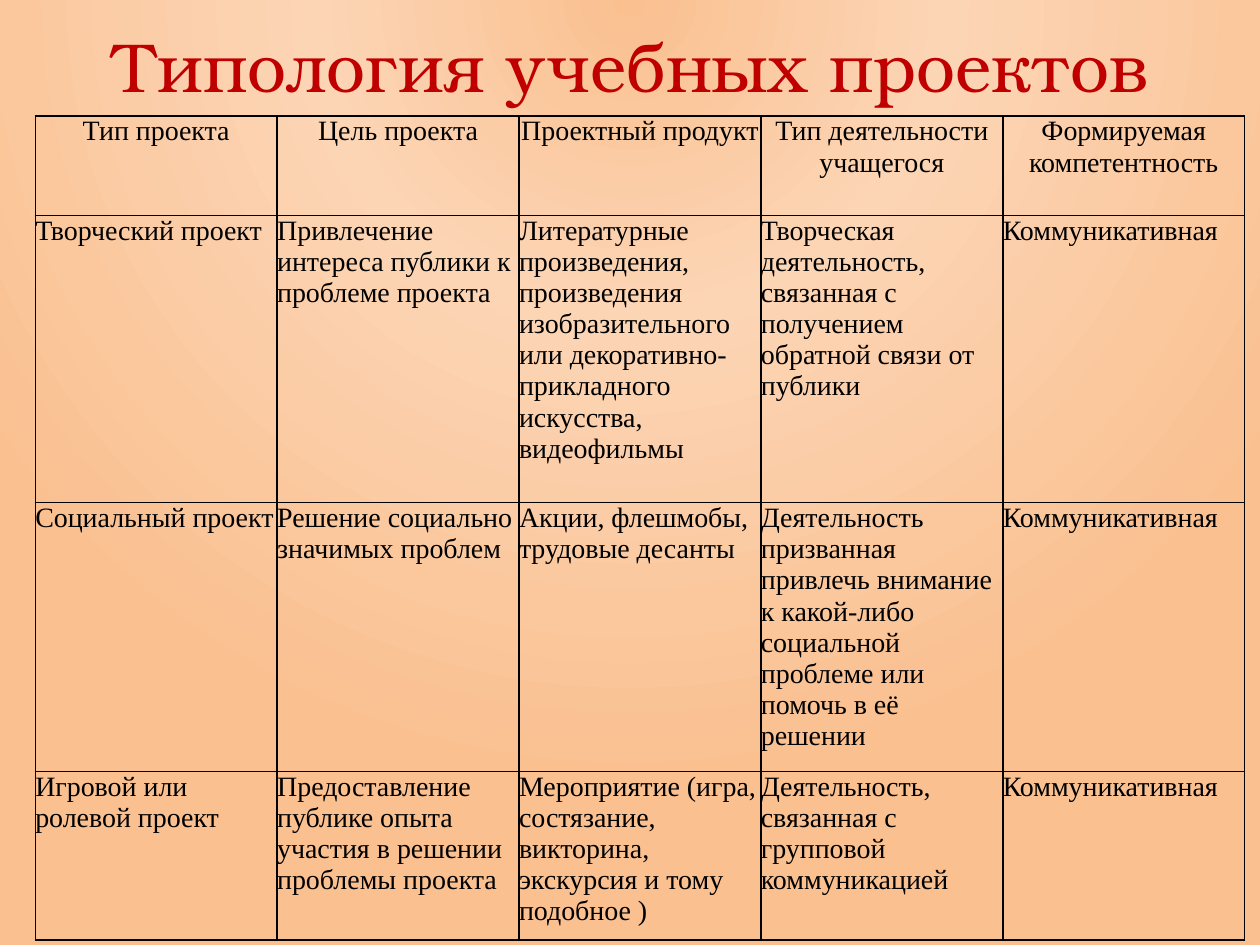
from lxml import etree
from pptx import Presentation
from pptx.dml.color import RGBColor
from pptx.enum.text import MSO_ANCHOR, PP_ALIGN
from pptx.oxml.ns import qn
from pptx.util import Inches, Pt

CENTER, LEFT = PP_ALIGN.CENTER, PP_ALIGN.LEFT
MIDDLE = MSO_ANCHOR.MIDDLE
BLANK_LAYOUT = 6

BLACK, RED = "000000", "C00000"
PEACH, LIGHT_PEACH = "FAC090", "FCD5B5"
BACKGROUND_STOPS = [(0, PEACH), (40, LIGHT_PEACH), (100, PEACH)]
BACKGROUND_FOCUS = {"l": 50, "t": -80, "r": 50, "b": 180}

TITLE_FORMAT = {"name": "TeX Gyre Bonum", "size": Pt(39.6), "bold": False}
CELL_FORMAT = {"name": "Times New Roman", "size": Pt(16), "bold": False}
MARGINS = ("margin_left", "margin_top", "margin_right", "margin_bottom")

COLUMN_WIDTH = 1.92
ROW_HEIGHTS = [0.79, 2.28, 1.98, 1.34]
PROJECT_TYPES = [
    ["Тип проекта", "Цель проекта", "Проектный продукт",
     "Тип деятельности учащегося", "Формируемая компетентность"],
    ["Творческий проект",
     "Привлечение интереса публики к проблеме проекта",
     "Литературные произведения, произведения изобразительного или "
     "декоративно-прикладного искусства, видеофильмы",
     "Творческая деятельность, связанная с получением обратной связи от публики",
     "Коммуникативная"],
    ["Социальный проект",
     "Решение социально значимых проблем",
     "Акции, флешмобы, трудовые десанты",
     "Деятельность призванная привлечь внимание к какой-либо социальной "
     "проблеме или помочь в её решении",
     "Коммуникативная"],
    ["Игровой или ролевой проект",
     "Предоставление публике опыта участия в решении проблемы проекта",
     "Мероприятие (игра, состязание, викторина, экскурсия и тому подобное )",
     "Деятельность, связанная с групповой коммуникацией",
     "Коммуникативная"],
]


def color(hex_value):
    return RGBColor.from_string(hex_value)


def write(paragraph, text, font_format, hex_value, alignment):
    paragraph.alignment = alignment
    run = paragraph.add_run()
    run.text = text
    for key, value in font_format.items():
        setattr(run.font, key, value)
    run.font.color.rgb = color(hex_value)


def add_background(slide):
    """Radial gradient centred above the slide."""
    slide.background.fill.gradient()
    gradient = slide.element.find(".//" + qn("a:gradFill"))
    for child in list(gradient):
        gradient.remove(child)
    stops = etree.SubElement(gradient, qn("a:gsLst"))
    for position, hex_value in BACKGROUND_STOPS:
        stop = etree.SubElement(stops, qn("a:gs"), pos=str(position * 1000))
        etree.SubElement(stop, qn("a:srgbClr"), val=hex_value)
    circle = etree.SubElement(gradient, qn("a:path"), {"path": "circle"})
    focus = {side: str(percent * 1000) for side, percent in BACKGROUND_FOCUS.items()}
    etree.SubElement(circle, qn("a:fillToRect"), focus)


def add_title(slide, left, top, width, height):
    title = slide.shapes.add_textbox(
        Inches(left), Inches(top), Inches(width), Inches(height))
    frame = title.text_frame
    frame.word_wrap = True
    frame.vertical_anchor = MIDDLE
    write(frame.paragraphs[0], "Типология учебных проектов",
          TITLE_FORMAT, RED, CENTER)


def add_borders(cell):
    properties = cell._tc.get_or_add_tcPr()
    for side in ("a:lnL", "a:lnR", "a:lnT", "a:lnB"):
        line = etree.SubElement(properties, qn(side), w=str(Pt(1)))
        fill = etree.SubElement(line, qn("a:solidFill"))
        etree.SubElement(fill, qn("a:srgbClr"), val=BLACK)


def add_project_table(slide, left, top):
    row_count, column_count = len(PROJECT_TYPES), len(PROJECT_TYPES[0])
    table = slide.shapes.add_table(
        row_count, column_count, Inches(left), Inches(top),
        Inches(COLUMN_WIDTH * column_count), Inches(sum(ROW_HEIGHTS))).table
    table.first_row = table.horz_banding = False
    for column in table.columns:
        column.width = Inches(COLUMN_WIDTH)
    for row_index, texts in enumerate(PROJECT_TYPES):
        table.rows[row_index].height = Inches(ROW_HEIGHTS[row_index])
        alignment = CENTER if row_index == 0 else LEFT
        for column_index, text in enumerate(texts):
            cell = table.cell(row_index, column_index)
            for margin in MARGINS:
                setattr(cell, margin, 0)
            add_borders(cell)
            cell.fill.background()
            write(cell.text_frame.paragraphs[0], text,
                  CELL_FORMAT, BLACK, alignment)


def main():
    presentation = Presentation()
    presentation.slide_width = Inches(10)
    presentation.slide_height = Inches(7.5)
    slide = presentation.slides.add_slide(presentation.slide_layouts[BLANK_LAYOUT])
    add_background(slide)
    add_title(slide, 0.51, -0.11, 9, 1.25)
    add_project_table(slide, 0.28, 0.92)
    presentation.save("out.pptx")


if __name__ == "__main__":
    main()
